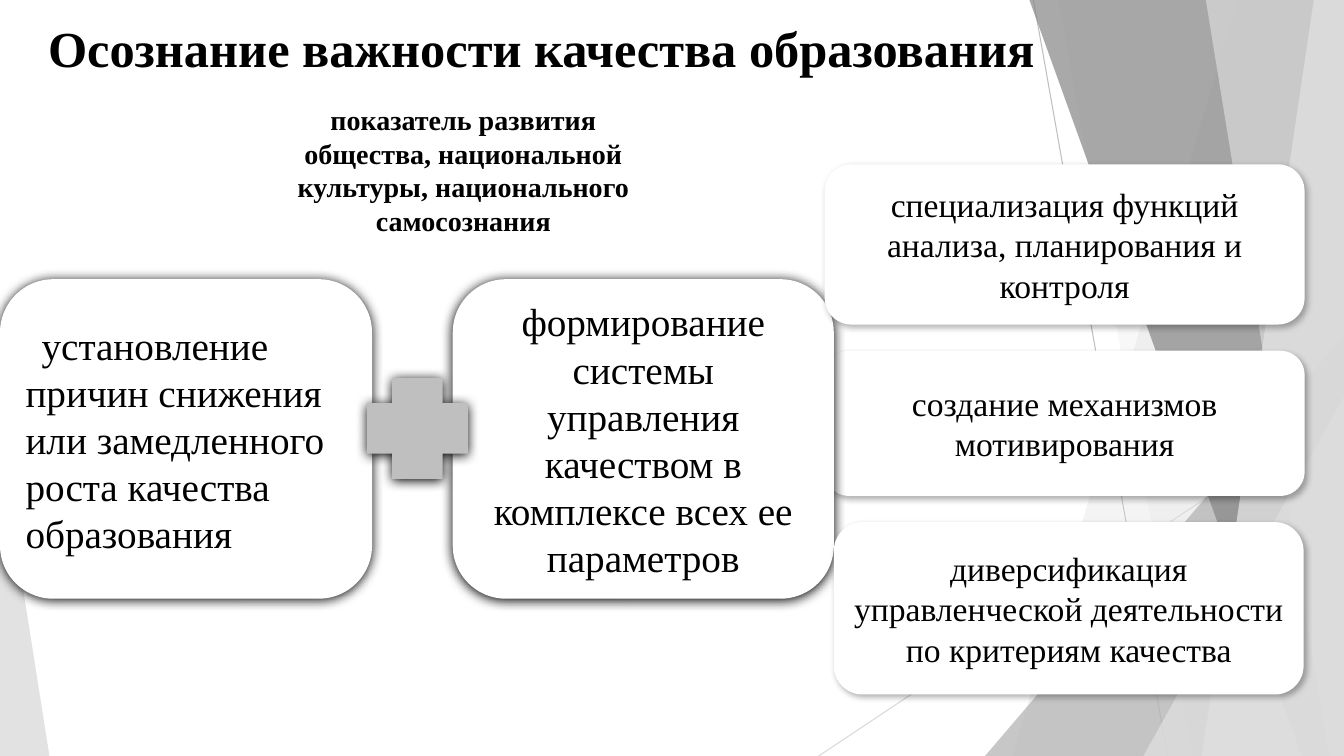
from lxml import etree
from pptx import Presentation
from pptx.dml.color import RGBColor
from pptx.enum.shapes import MSO_CONNECTOR, MSO_SHAPE as SHAPE
from pptx.enum.text import MSO_ANCHOR as ANCHOR, PP_ALIGN as ALIGN
from pptx.oxml.ns import qn
from pptx.util import Inches, Pt

WIDTH, HEIGHT = 13.33, 7.5
FONT = "Times New Roman"
COLORS = {
    "text": "000000", "card": "FFFFFF", "plus": "BFBFBF",
    "line": "BFBFBF", "pale_line": "D9D9D9", "pale": "DDDDDD",
    "mid": "B2B2B2", "dark": "858585", "light": "EBEBEB",
}
STRONG_SHADOW = (100, 8.5, 1, 90)
SOFT_SHADOW = (30, 4.5, 2.6, 53)


def color(name):
    """Return the named palette colour."""
    return RGBColor.from_string(COLORS[name])


def paint(shape, fill, opacity=100):
    """Give a shape a plain fill with no line or shadow."""
    shape.shadow.inherit = False
    shape.line.fill.background()
    shape.fill.solid()
    shape.fill.fore_color.rgb = color(fill)
    if opacity < 100:
        rgb = shape._element.spPr.find(qn("a:solidFill")).find(qn("a:srgbClr"))
        etree.SubElement(rgb, qn("a:alpha"), val=str(opacity * 1000))


def cast_shadow(shape, opacity, blur, distance, angle):
    """Add an outer shadow to a painted shape."""
    effects = shape._element.spPr.find(qn("a:effectLst"))
    shadow = etree.SubElement(
        effects, qn("a:outerShdw"), blurRad=str(Pt(blur)), dist=str(Pt(distance)),
        dir=str(angle * 60000), algn="ctr", rotWithShape="0")
    rgb = etree.SubElement(shadow, qn("a:srgbClr"), val=COLORS["text"])
    etree.SubElement(rgb, qn("a:alpha"), val=str(opacity * 1000))


def write(shape, text, size, bold=False, align=ALIGN.CENTER, anchor=ANCHOR.MIDDLE):
    """Write one formatted paragraph into a shape."""
    frame = shape.text_frame
    frame.word_wrap = True
    frame.vertical_anchor = anchor
    frame.text = text
    paragraph = frame.paragraphs[0]
    paragraph.alignment = align
    font = paragraph.runs[0].font
    font.name, font.size, font.bold = FONT, Pt(size), bold
    font.color.rgb = color("text")
    return paragraph


def add_piece(slide, kind, box, fill, opacity=100):
    """Add a painted preset shape in the given box."""
    shape = slide.shapes.add_shape(kind, *map(Inches, box))
    paint(shape, fill, opacity)
    return shape


def add_card(slide, box, text, size, shadow, align=ALIGN.CENTER):
    """Add a rounded white card with text and return its paragraph."""
    card = add_piece(slide, SHAPE.ROUNDED_RECTANGLE, box, "card")
    cast_shadow(card, *shadow)
    return write(card, text, size, align=align)


def add_ray(slide, start, end, name):
    """Add a thin straight background line."""
    ray = slide.shapes.add_connector(
        MSO_CONNECTOR.STRAIGHT, *map(Inches, start + end))
    ray.line.color.rgb = color(name)
    ray.line.width = Pt(0.75)
    etree.SubElement(ray._element.spPr, qn("a:effectLst"))


def add_band(slide, top_x, bottom_x, right, bottom, fill, opacity):
    """Add a slanted band reaching to the right edge."""
    corners = [(right, 0), (right, bottom), (bottom_x, bottom)]
    builder = slide.shapes.build_freeform(Inches(top_x), 0, scale=1.0)
    builder.add_line_segments([(Inches(x), Inches(y)) for x, y in corners])
    paint(builder.convert_to_shape(), fill, opacity)


def add_triangle(slide, box, apex, fill, opacity):
    """Add a triangle whose apex lies at a fraction of its width."""
    add_piece(slide, SHAPE.ISOSCELES_TRIANGLE, box, fill, opacity).adjustments[0] = apex


def add_facets(slide, right, bottom):
    """Build the faceted background up to the right and bottom edges."""
    add_ray(slide, (10.25, 0), (11.58, bottom), "line")
    add_ray(slide, (right, 4.03), (8.12, bottom), "pale_line")
    add_band(slide, 12.28, 10.04, right, bottom, "pale", 30)
    add_band(slide, 10.5, 11.83, right, bottom, "pale", 20)
    add_triangle(slide, (9.77, 3.33, right - 9.77, bottom - 3.33), 1, "mid", 72)
    add_band(slide, 10.21, 12.91, right, bottom, "dark", 70)
    add_band(slide, 13.03, 11.92, right, bottom, "light", 70)
    add_band(slide, 11.96, 13.18, right, bottom, "pale", 65)
    add_triangle(slide, (11.34, 3.93, right - 11.34, bottom - 3.93), 1, "pale", 80)
    add_triangle(slide, (0, 4.39, 0.49, bottom - 4.39), 0, "pale", 85)


def add_heading(slide, left, top, width, height):
    """Add the slide title."""
    heading = slide.shapes.add_textbox(*map(Inches, (left, top, width, height)))
    write(heading, "Осознание важности качества образования", 36, True, anchor=ANCHOR.TOP)


def add_tasks(slide, left, top, width, height):
    """Add the two large cards at the ends of the given box."""
    cause = add_card(
        slide, (left, top, 3.69, height),
        "установление причин снижения или замедленного роста качества образования",
        28, STRONG_SHADOW, ALIGN.LEFT)
    cause._p.get_or_add_pPr().set("indent", str(Inches(0.16)))
    add_card(
        slide, (left + width - 3.78, top, 3.78, height),
        "формирование системы управления качеством в комплексе всех ее параметров",
        28, STRONG_SHADOW)


def add_plus(slide, left, top, size):
    """Add the plus sign that joins the two large cards."""
    plus = add_piece(slide, SHAPE.CROSS, (left, top, size, size), "plus")
    cast_shadow(plus, *STRONG_SHADOW)


def add_indicator(slide, left, top, width, height):
    """Add the bold indicator text in its oval."""
    oval = add_piece(slide, SHAPE.OVAL, (left, top, width, height), "card")
    write(oval, "показатель развития общества, национальной культуры, "
                "национального самосознания", 20, True)


def build_slide(slide):
    """Place every region from back to front."""
    add_facets(slide, WIDTH, HEIGHT)
    add_heading(slide, 0.23, 0.12, 10.28, 1.44)
    add_card(slide, (8.18, 3.48, 4.76, 1.44), "создание механизмов мотивирования",
             24, SOFT_SHADOW)
    add_tasks(slide, 0, 2.77, 8.27, 3.17)
    add_card(slide, (8.27, 5.18, 4.66, 1.71),
             "диверсификация управленческой деятельности по критериям качества",
             24, SOFT_SHADOW)
    add_card(slide, (8.18, 1.63, 4.76, 1.59),
             "специализация функций анализа, планирования и контроля", 24, SOFT_SHADOW)
    add_plus(slide, 3.64, 3.75, 1)
    add_indicator(slide, 1.85, 0.83, 5.49, 1.71)


def main():
    """Create and save the presentation."""
    presentation = Presentation()
    presentation.slide_width = Inches(WIDTH)
    presentation.slide_height = Inches(HEIGHT)
    build_slide(presentation.slides.add_slide(presentation.slide_layouts[6]))
    presentation.save("out.pptx")


if __name__ == "__main__":
    main()
